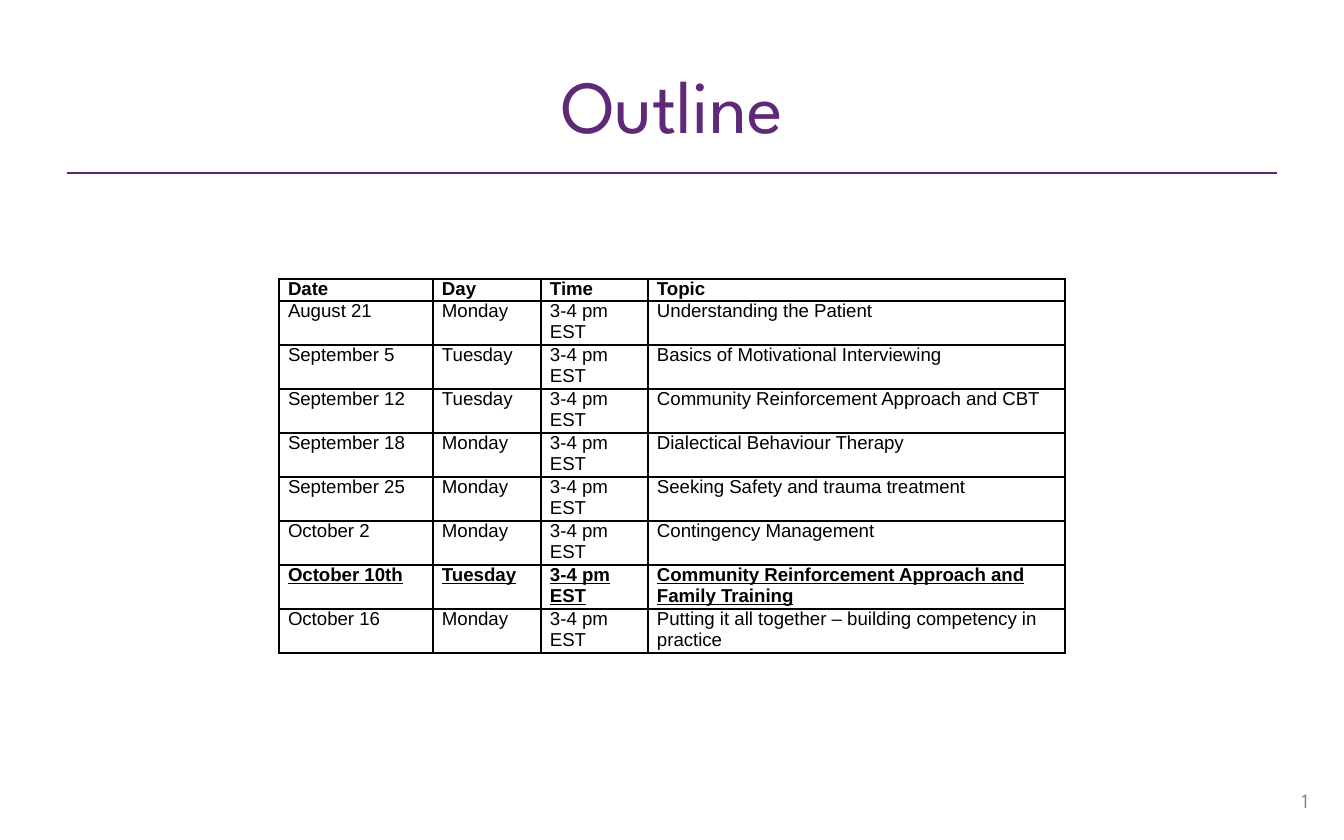
from lxml import etree
from pptx import Presentation, util as u
from pptx.dml.color import RGBColor
from pptx.enum import shapes, text
from pptx.oxml.ns import qn

TITLE = "Outline"
PAGE = "1"
HEADER = ("Date", "Day", "Time", "Topic")
TIME = "3-4 pm EST"
SESSIONS = [
    ("August 21", "Monday", "Understanding the Patient"),
    ("September 5", "Tuesday", "Basics of Motivational Interviewing"),
    ("September 12", "Tuesday", "Community Reinforcement Approach and CBT"),
    ("September 18", "Monday", "Dialectical Behaviour Therapy"),
    ("September 25", "Monday", "Seeking Safety and trauma treatment"),
    ("October 2", "Monday", "Contingency Management"),
    ("October 10th", "Tuesday", "Community Reinforcement Approach and Family Training"),
    ("October 16", "Monday", "Putting it all together – building competency in practice"),
]
CURRENT = "October 10th"

PURPLE = RGBColor(0x60, 0x29, 0x77)
RULE = RGBColor(0x5D, 0x26, 0x75)
GREY = RGBColor(0x88, 0x88, 0x88)
BLACK = RGBColor(0, 0, 0)
HEAD_FONT, BODY_FONT = "League Spartan", "Arial"

PX = 914400 / 134.4
COLS = (154, 108, 107, 417)
HEADER_H, ROW_H = 22, 44
TABLE_X, TABLE_Y = 279, 279


def px(n):
    return u.Emu(round(n * PX))


def box(*lengths):
    return [px(n) for n in lengths]


def write(tf, words, font, size, color, align=None, bold=False, underline=False):
    p = tf.paragraphs[0]
    p.alignment = align
    r = p.add_run()
    r.text = words
    f = r.font
    f.name, f.size, f.bold, f.underline = font, u.Pt(size), bold, underline
    f.color.rgb = color


def add_borders(cell):
    tcPr = cell._tc.get_or_add_tcPr()
    for i, side in enumerate(("a:lnL", "a:lnR", "a:lnT", "a:lnB")):
        ln = etree.Element(qn(side), w=str(u.Pt(1)))
        fill = etree.SubElement(ln, qn("a:solidFill"))
        etree.SubElement(fill, qn("a:srgbClr"), val=str(BLACK))
        tcPr.insert(i, ln)


prs = Presentation()
prs.slide_width, prs.slide_height = u.Inches(10), u.Inches(6.25)
s = prs.slides.add_slide(prs.slide_layouts[5])

rule = s.shapes.add_connector(shapes.MSO_CONNECTOR.STRAIGHT, *box(67, 173, 1277, 173))
rule.line.color.rgb = RULE
rule.line.width = u.Pt(1)
etree.SubElement(rule._element.spPr, qn("a:effectLst"))

title = s.shapes.title
title.left, title.top, title.width, title.height = box(67, 34, 1210, 139)
title.text_frame.vertical_anchor = text.MSO_ANCHOR.MIDDLE
write(title.text_frame, TITLE, HEAD_FONT, 40, PURPLE, text.PP_ALIGN.CENTER)

rows = [HEADER] + [(date, day, TIME, topic) for date, day, topic in SESSIONS]
heights = [HEADER_H] + [ROW_H] * len(SESSIONS)
table = s.shapes.add_table(
    len(rows), len(COLS), *box(TABLE_X, TABLE_Y, sum(COLS), sum(heights))
).table
table.first_row = table.horz_banding = False
for col, w in zip(table.columns, COLS):
    col.width = px(w)
for i, (row, values) in enumerate(zip(table.rows, rows)):
    row.height = px(heights[i])
    current = values[0] == CURRENT
    for cell, words in zip(row.cells, values):
        cell.margin_left = cell.margin_right = px(9)
        cell.margin_top = cell.margin_bottom = 0
        cell.fill.background()
        add_borders(cell)
        write(cell.text_frame, words, BODY_FONT, 10, BLACK,
              bold=i == 0 or current, underline=current)

number = s.shapes.add_textbox(*box(1277, 778, 56, 44))
tf = number.text_frame
tf.word_wrap = True
tf.vertical_anchor = text.MSO_ANCHOR.MIDDLE
write(tf, PAGE, HEAD_FONT, 11, GREY, text.PP_ALIGN.CENTER)

prs.save("out.pptx")
